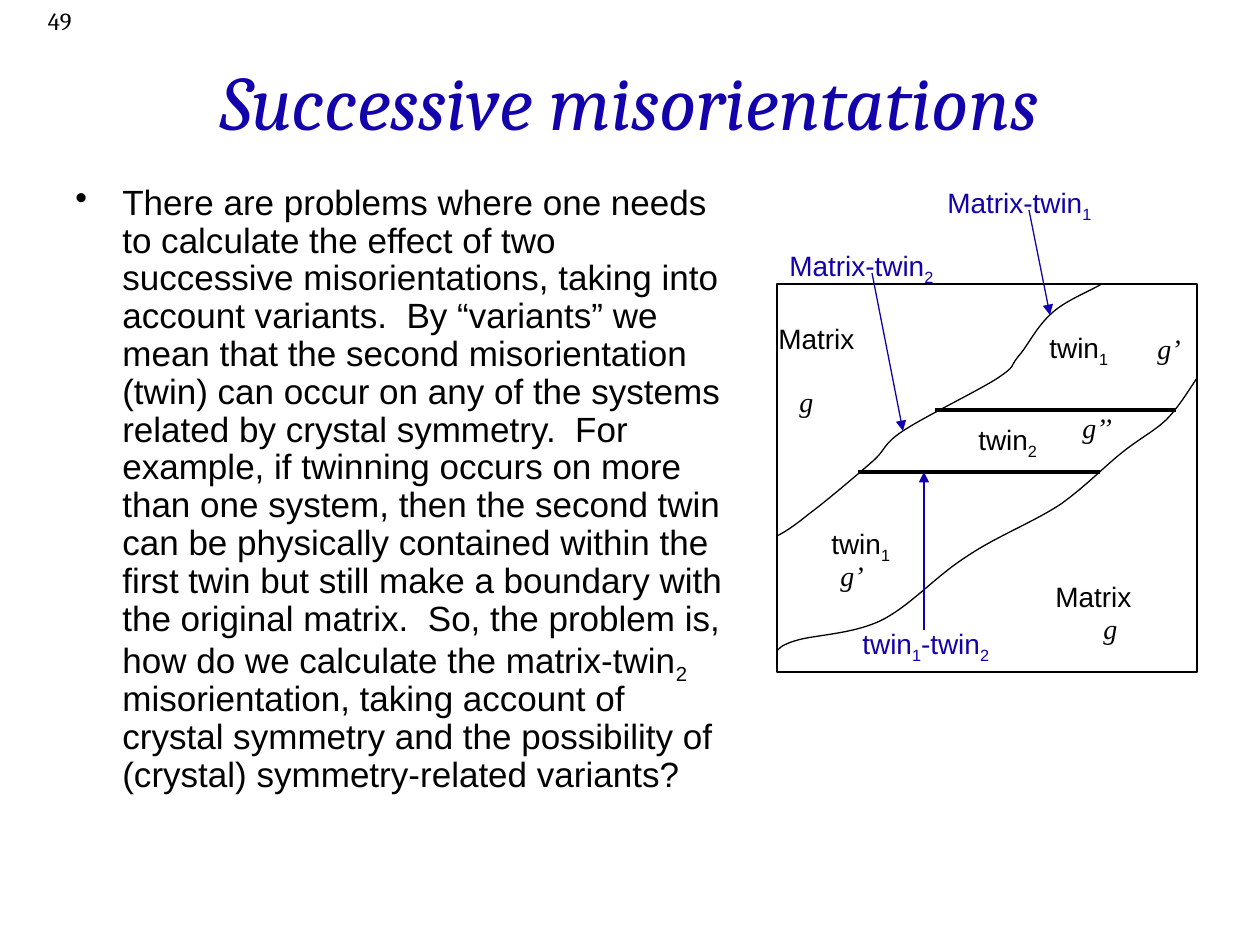
from dataclasses import dataclass

from lxml import etree
from pptx import Presentation
from pptx.dml.color import RGBColor
from pptx.enum.shapes import MSO_CONNECTOR, MSO_SHAPE
from pptx.enum.text import MSO_ANCHOR, MSO_AUTO_SIZE, PP_ALIGN
from pptx.oxml.ns import qn
from pptx.util import Pt

STRAIGHT = MSO_CONNECTOR.STRAIGHT
RECTANGLE = MSO_SHAPE.RECTANGLE
LEFT, CENTER, RIGHT = PP_ALIGN.LEFT, PP_ALIGN.CENTER, PP_ALIGN.RIGHT
MIDDLE = MSO_ANCHOR.MIDDLE
FIXED, GROW = MSO_AUTO_SIZE.NONE, MSO_AUTO_SIZE.SHAPE_TO_FIT_TEXT

EMU_PER_PX = 914400 / 126


@dataclass(frozen=True)
class Theme:
    black: RGBColor = RGBColor(0, 0, 0)
    blue: RGBColor = RGBColor(0x13, 0x01, 0xAB)
    sans: str = "Arial"
    serif: str = "Cambria"
    symbol: str = "Times New Roman"
    title_size: int = 44
    body_size: int = 20
    label_size: int = 16
    number_size: int = 14
    thin: float = 0.75
    thick: float = 2.25


THEME = Theme()

BODY = (
    "There are problems where one needs to calculate the effect of two successive "
    "misorientations, taking into account variants.  By “variants” we mean that the "
    "second misorientation (twin) can occur on any of the systems related by crystal "
    "symmetry.  For example, if twinning occurs on more than one system, then the "
    "second twin can be physically contained within the first twin but still make a "
    "boundary with the original matrix.  So, the problem is, how do we calculate the "
    "matrix-twin_2 misorientation, taking account of crystal symmetry and the "
    "possibility of (crystal) symmetry-related variants?"
)

# Grain boundaries: a start point, then two control points and an end per curve.
UPPER_BOUNDARY = [
    (325, 0),
    (307, 10), (286, 18), (273, 31),
    (259, 44), (250, 63), (241, 73),
    (232, 84), (240, 81), (221, 94),
    (201, 107), (147, 133), (126, 147),
    (105, 161), (110, 165), (95, 178),
    (79, 192), (47, 219), (32, 230),
    (16, 243), (8, 248), (0, 252),
]
LOWER_BOUNDARY = [
    (420, 94),
    (410, 109), (401, 124), (389, 136),
    (376, 148), (365, 153), (347, 167),
    (329, 181), (309, 202), (284, 220),
    (257, 238), (218, 253), (189, 273),
    (159, 292), (133, 322), (105, 336),
    (77, 350), (38, 351), (21, 356),
    (3, 361), (2, 365), (0, 367),
]
TWIN_PLANES = [((158, 126), (399, 126)), ((81, 188), (323, 188))]
ARROWS = [((95, -11), (126, 147)), ((252, -74), (273, 31)), ((147, 346), (147, 188))]
GRAIN_LABELS = [
    ("twin_2", 189, 132, 86), ("twin_1", 260, 40, 86), ("twin_1", 42, 236, 86),
    ("Matrix", -11, 31, 102), ("Matrix", 266, 289, 102),
]
INTERFACE_LABELS = [
    ("Matrix-twin_1", 158, -105, 171), ("Matrix-twin_2", 0, -42, 171),
    ("twin_1-twin_2", 73, 336, 156),
]
ORIENTATION_LABELS = [
    ("g", 10, 94, 43), ("g’’", 293, 120, 59), ("g", 314, 321, 43),
    ("g’", 51, 268, 52), ("g’", 368, 41, 52),
]
LABEL_HEIGHT = 46


def px(*lengths):
    return [round(length * EMU_PER_PX) for length in lengths]


def write_text(shape, text, *, size, font=THEME.sans, color=THEME.black,
               italic=False, align=LEFT, wrap=True, auto_size=FIXED):
    """Fill a shape with one paragraph; the character after "_" is a subscript."""
    frame = shape.text_frame
    frame.word_wrap = wrap
    frame.auto_size = auto_size
    paragraph = frame.paragraphs[0]
    paragraph.alignment = align
    first, *rest = text.split("_")
    pieces = [(first, False)]
    for piece in rest:
        pieces += [(piece[0], True), (piece[1:], False)]
    for content, subscript in pieces:
        if not content:
            continue
        run = paragraph.add_run()
        run.text = content
        run.font.name, run.font.size = font, Pt(size)
        run.font.color.rgb, run.font.italic = color, italic
        if subscript:
            run.font._element.set("baseline", "-25000")
    return paragraph


def set_line(shape, color, width):
    shape.line.color.rgb = color
    shape.line.width = Pt(width)


def add_line(slide, start, end, color, width, arrow=False):
    line = slide.shapes.add_connector(STRAIGHT, *px(*start, *end))
    set_line(line, color, width)
    if arrow:
        etree.SubElement(line.line._get_or_add_ln(), qn("a:tailEnd"), type="triangle")
    etree.SubElement(line._element.spPr, qn("a:effectLst"))


def add_boundary(slide, points, origin):
    """Draw an open outline of cubic curves, relative to origin."""
    builder = slide.shapes.build_freeform(*points[0], scale=EMU_PER_PX)
    builder.add_line_segments(points[3::3], close=False)
    boundary = builder.convert_to_shape(*px(*origin))
    left, top = (min(axis) for axis in zip(*points))
    segments = list(boundary._element.iter(qn("a:lnTo")))
    for index, segment in enumerate(segments):
        segment.tag = qn("a:cubicBezTo")
        segment.clear()
        for x, y in points[3 * index + 1:3 * index + 4]:
            etree.SubElement(segment, qn("a:pt"), x=str(x - left), y=str(y - top))
    boundary.fill.background()
    boundary.shadow.inherit = False
    set_line(boundary, THEME.black, THEME.thin)


def add_number(slide, box):
    write_text(slide.shapes.add_textbox(*px(*box)), "49",
               size=THEME.number_size, font=THEME.serif, align=RIGHT)


def add_title(slide, box):
    title = slide.shapes.title
    title.left, title.top, title.width, title.height = px(*box)
    title.text_frame.vertical_anchor = MIDDLE
    write_text(title, "Successive misorientations", size=THEME.title_size,
               font=THEME.serif, color=THEME.blue, italic=True, align=CENTER)


def add_body(slide, box):
    paragraph = write_text(slide.shapes.add_textbox(*px(*box)), BODY,
                           size=THEME.body_size)
    paragraph.line_spacing = 0.9
    paragraph.space_before = Pt(4)
    indent, = px(47)
    properties = paragraph._p.get_or_add_pPr()
    properties.set("marL", str(indent))
    properties.set("indent", str(-indent))
    etree.SubElement(properties, qn("a:buChar"), char="•")


def add_twin_diagram(slide, box):
    left, top = box[:2]
    frame = slide.shapes.add_shape(RECTANGLE, *px(*box))
    frame.fill.background()
    frame.shadow.inherit = False
    set_line(frame, THEME.black, THEME.thin)

    for boundary in (UPPER_BOUNDARY, LOWER_BOUNDARY):
        add_boundary(slide, boundary, (left, top))

    def add_lines(lines, *style, arrow=False):
        for ends in lines:
            start, end = [(left + x, top + y) for x, y in ends]
            add_line(slide, start, end, *style, arrow=arrow)

    def add_labels(labels, **style):
        for text, x, y, width in labels:
            label = slide.shapes.add_textbox(*px(left + x, top + y, width, LABEL_HEIGHT))
            write_text(label, text, size=THEME.label_size, wrap=False,
                       auto_size=GROW, **style)

    add_lines(TWIN_PLANES, THEME.black, THEME.thick)
    add_labels(GRAIN_LABELS)
    add_labels(INTERFACE_LABELS, color=THEME.blue)
    add_lines(ARROWS, THEME.blue, THEME.thin, arrow=True)
    add_labels(ORIENTATION_LABELS, font=THEME.symbol, italic=True)


def main():
    deck = Presentation()
    deck.slide_width, deck.slide_height = px(1260, 945)
    slide = deck.slides.add_slide(deck.slide_layouts.get_by_name("Title Only"))
    add_number(slide, (0, 0, 84, 42))
    add_title(slide, (94, 21, 1071, 158))
    add_body(slide, (63, 179, 683, 640))
    add_twin_diagram(slide, (777, 284, 420, 388))
    deck.save("out.pptx")


if __name__ == "__main__":
    main()
